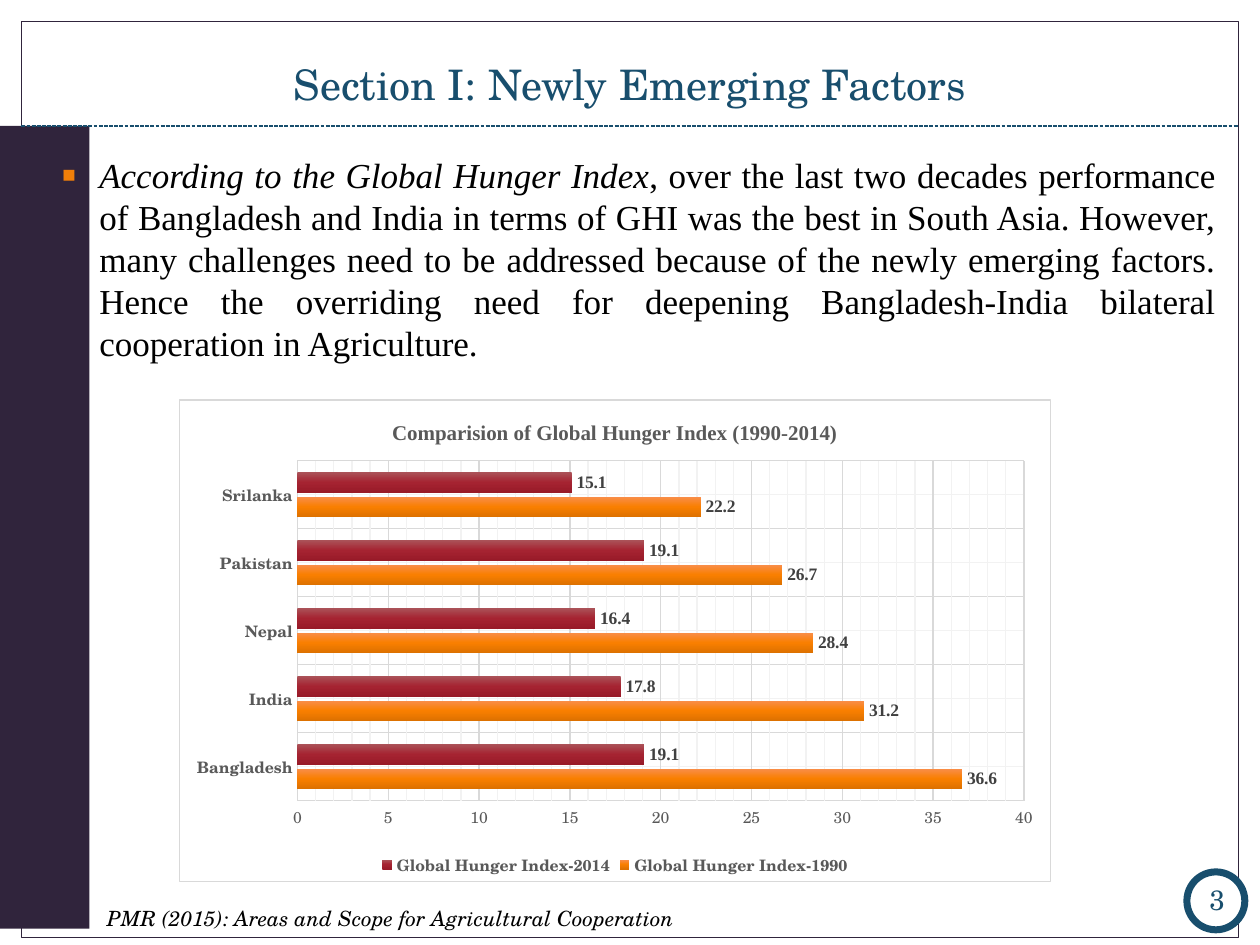
from dataclasses import dataclass

from lxml import etree
from pptx import Presentation
from pptx.chart.data import CategoryChartData
from pptx.dml.color import RGBColor
from pptx.enum.chart import XL_CHART_TYPE, XL_LABEL_POSITION, XL_LEGEND_POSITION, XL_TICK_MARK
from pptx.enum.dml import MSO_LINE
from pptx.enum.shapes import MSO_CONNECTOR, MSO_SHAPE
from pptx.enum.text import MSO_ANCHOR, PP_ALIGN
from pptx.oxml import parse_xml
from pptx.oxml.ns import nsdecls, qn
from pptx.util import Inches, Pt


@dataclass(frozen=True)
class Theme:
    plum: str = "30243C"
    blue: str = "184E6D"
    orange: str = "F07F09"
    black: str = "000000"
    white: str = "FFFFFF"
    gray: str = "595959"
    label: str = "404040"
    grid: str = "D9D9D9"
    minor_grid: str = "F2F2F2"
    orange_bar: tuple = ("F98E4B", "F97F00", "DD7100")
    red_bar: tuple = ("AB5258", "A52331", "981A28")
    heading: str = "TeX Gyre Schola"
    serif: str = "Times New Roman"
    title_size: int = 24
    body_size: int = 20
    number_size: int = 16
    note_size: int = 12
    label_size: int = 10
    axis_size: int = 9


THEME = Theme()


def color(value):
    return RGBColor.from_string(value)


def style_font(font, name, size, value, bold=False, italic=False):
    font.name, font.size = name, Pt(size)
    font.color.rgb = color(value)
    font.bold, font.italic = bold, italic


def style_line(line, value, width):
    line.color.rgb = color(value)
    line.width = Pt(width)


def add_panel(page, box, kind=MSO_SHAPE.RECTANGLE, fill=None, line=None, width=0.75):
    panel = page.shapes.add_shape(kind, *map(Inches, box))
    panel.shadow.inherit = False
    if fill:
        panel.fill.solid()
        panel.fill.fore_color.rgb = color(fill)
    else:
        panel.fill.background()
    if line:
        style_line(panel.line, line, width)
    else:
        panel.line.fill.background()


def add_text(page, box, text, size, value, align=PP_ALIGN.LEFT,
             anchor=MSO_ANCHOR.TOP, italic=False):
    frame = page.shapes.add_textbox(*map(Inches, box)).text_frame
    frame.word_wrap = True
    frame.vertical_anchor = anchor
    frame.text = text
    para = frame.paragraphs[0]
    para.alignment = align
    style_font(para.runs[0].font, THEME.heading, size, value, italic=italic)
    return frame


def add_background(page, box):
    """Side band, outer frame and dashed rule under the title."""
    left, top, width, height = box
    rule_top = 1
    add_panel(page, (0, rule_top, 0.71, 6.37), fill=THEME.plum)
    add_panel(page, box, line=THEME.plum)
    rule = page.shapes.add_connector(
        MSO_CONNECTOR.STRAIGHT, Inches(left), Inches(rule_top),
        Inches(left + width), Inches(rule_top))
    style_line(rule.line, THEME.blue, 0.75)
    rule.line.dash_style = MSO_LINE.SQUARE_DOT
    etree.SubElement(rule._element.spPr, qn("a:effectLst"))


def add_page_number(page, box, number):
    left, top, width, height = box
    add_panel(page, box, MSO_SHAPE.OVAL, THEME.white, THEME.blue, 4)
    frame = add_text(page, (left - 0.01, top - 0.02, width + 0.04, height + 0.02), number,
                     THEME.number_size, THEME.blue, PP_ALIGN.CENTER, MSO_ANCHOR.MIDDLE)
    frame.margin_left = frame.margin_right = Inches(0.05)


def add_body(page, box, lead, rest):
    """One justified bullet with an italic lead."""
    frame = page.shapes.add_textbox(*map(Inches, box)).text_frame
    frame.word_wrap = True
    para = frame.paragraphs[0]
    para.alignment = PP_ALIGN.JUSTIFY
    para.line_spacing = Pt(24)
    properties = para._p.get_or_add_pPr()
    properties.set("marL", str(Inches(0.3)))
    properties.set("indent", str(-Inches(0.3)))
    for xml in (f'<a:buClr {nsdecls("a")}><a:srgbClr val="{THEME.orange}"/></a:buClr>',
                f'<a:buSzPct {nsdecls("a")} val="85000"/>',
                f'<a:buFont {nsdecls("a")} typeface="{THEME.heading}"/>',
                f'<a:buChar {nsdecls("a")} char="▪"/>'):
        properties.append(parse_xml(xml))
    for text, italic in ((lead, True), (rest, False)):
        span = para.add_run()
        span.text = text
        style_font(span.font, THEME.serif, THEME.body_size, THEME.black, italic=italic)


def gradient_fill(stops):
    marks = "".join(f'<a:gs pos="{index * 50000}"><a:srgbClr val="{value}"/></a:gs>'
                    for index, value in enumerate(stops))
    return parse_xml(f'<a:gradFill {nsdecls("a")} rotWithShape="1"><a:gsLst>{marks}</a:gsLst>'
                     '<a:lin ang="5400000" scaled="0"/></a:gradFill>')


def chart_format(line, fill=""):
    """Chart shape properties with a thin line and an optional fill."""
    solid = '<a:solidFill><a:srgbClr val="{}"/></a:solidFill>'
    return parse_xml(
        f'<c:spPr {nsdecls("c", "a")}>{solid.format(fill) if fill else ""}'
        f'<a:ln w="{Pt(0.75)}">{solid.format(line)}</a:ln></c:spPr>')


def style_axis(axis, bold):
    axis.major_tick_mark = axis.minor_tick_mark = XL_TICK_MARK.NONE
    axis.has_major_gridlines = axis.has_minor_gridlines = True
    style_line(axis.major_gridlines.format.line, THEME.grid, 0.75)
    axis._element.find(qn("c:minorGridlines")).append(chart_format(THEME.minor_grid))
    style_font(axis.tick_labels.font, THEME.heading, THEME.axis_size, THEME.gray, bold)


def add_hunger_chart(page, box, title, countries, series):
    data = CategoryChartData()
    data.categories = countries
    for name, values, stops in series:
        data.add_series(name, values)
    chart = page.shapes.add_chart(
        XL_CHART_TYPE.BAR_CLUSTERED, *map(Inches, box), data).chart
    style_font(chart.font, THEME.heading, THEME.label_size, THEME.black)

    # Title and legend
    chart.has_title = True
    chart.chart_title.include_in_layout = False
    heading = chart.chart_title.text_frame
    heading.text = title
    style_font(heading.paragraphs[0].runs[0].font, THEME.serif, THEME.note_size,
               THEME.gray, True)
    chart.has_legend = True
    chart.legend.position = XL_LEGEND_POSITION.BOTTOM
    chart.legend.include_in_layout = False
    style_font(chart.legend.font, THEME.heading, THEME.axis_size, THEME.gray, True)

    # Axes
    style_axis(chart.category_axis, True)
    style_line(chart.category_axis.format.line, THEME.grid, 1)
    style_axis(chart.value_axis, False)
    chart.value_axis.format.line.fill.background()
    chart.value_axis.minimum_scale, chart.value_axis.maximum_scale = 0, 40
    chart.value_axis.major_unit, chart.value_axis.minor_unit = 5, 1

    # Bars and their labels
    plot = chart.plots[0]
    plot.gap_width, plot.overlap, plot.vary_by_categories = 115, -20, False
    for bars, (name, values, stops) in zip(plot.series, series):
        bars.format.line.fill.background()
        bars._element.get_or_add_spPr().insert(0, gradient_fill(stops))
        labels = bars.data_labels
        labels.show_value = True
        labels.position = XL_LABEL_POSITION.OUTSIDE_END
        style_font(labels.font, THEME.serif, THEME.label_size, THEME.label, True)

    # White chart area with a thin border
    chart._chartSpace.find(qn("c:chart")).addnext(chart_format(THEME.grid, THEME.white))


def main():
    deck = Presentation()
    deck.slide_width, deck.slide_height = Inches(10), Inches(7.5)
    page = deck.slides.add_slide(deck.slide_layouts[6])
    add_background(page, (0.17, 0.17, 9.66, 7.27))
    add_page_number(page, (9.42, 6.92, 0.46, 0.46), "3")
    add_text(page, (0.75, 7.14, 9.2, 0.34),
             "PMR (2015): Areas and Scope for Agricultural Cooperation",
             THEME.note_size, THEME.black, italic=True)
    add_body(page, (0.39, 1.17, 9.36, 1.9), "According to the Global Hunger Index",
             ", over the last two decades performance of Bangladesh and India in terms of GHI "
             "was the best in South Asia. However, many challenges need to be addressed because "
             "of the newly emerging factors. Hence the overriding need for deepening "
             "Bangladesh-India bilateral cooperation in Agriculture.")
    add_text(page, (0.25, 0.08, 9.5, 0.83), "Section I: Newly Emerging Factors",
             THEME.title_size, THEME.blue, PP_ALIGN.CENTER, MSO_ANCHOR.BOTTOM)
    add_hunger_chart(
        page, (1.42, 3.17, 6.92, 3.83), "Comparision of Global Hunger Index (1990-2014)",
        ("Bangladesh", "India", "Nepal", "Pakistan", "Srilanka"),
        (("Global Hunger Index-1990", (36.6, 31.2, 28.4, 26.7, 22.2), THEME.orange_bar),
         ("Global Hunger Index-2014", (19.1, 17.8, 16.4, 19.1, 15.1), THEME.red_bar)))
    deck.save("out.pptx")


if __name__ == "__main__":
    main()
